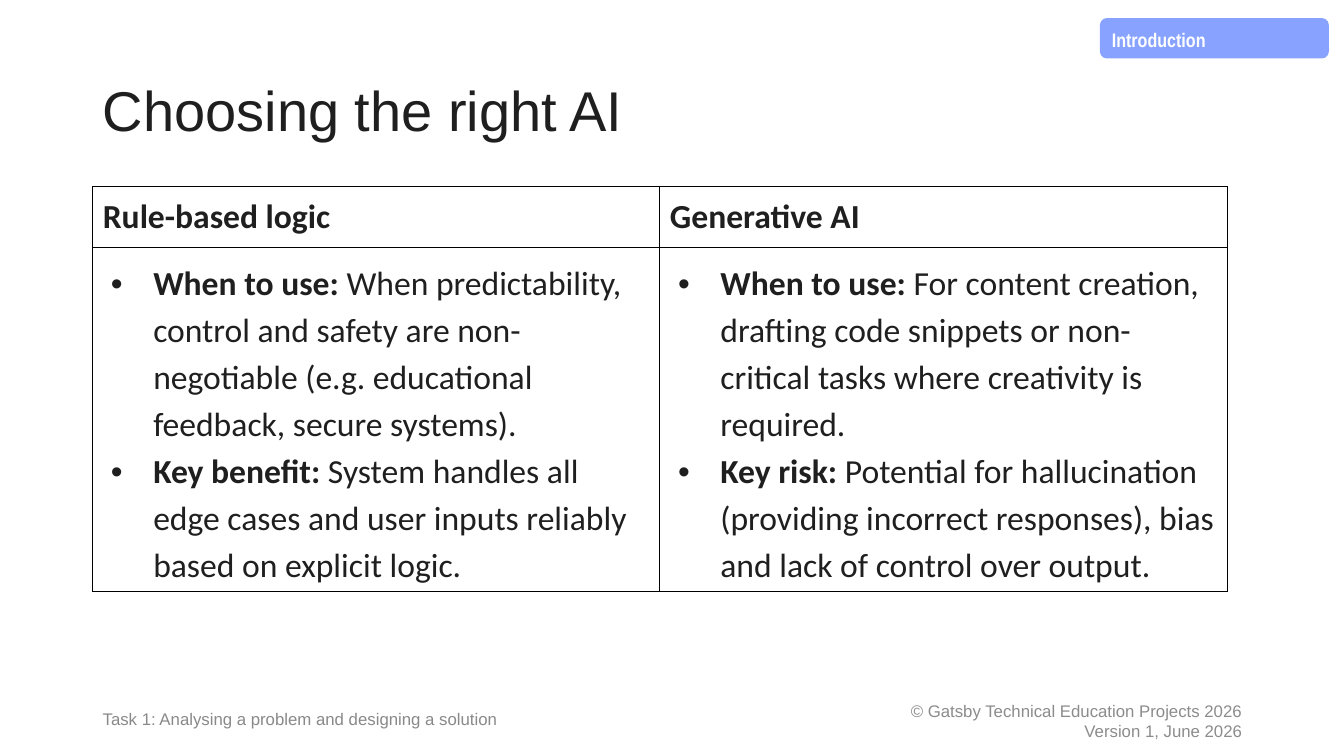
from lxml import etree
from pptx import Presentation
from pptx.dml.color import RGBColor
from pptx.enum.shapes import MSO_SHAPE
from pptx.enum.text import MSO_ANCHOR, PP_ALIGN
from pptx.oxml.ns import qn
from pptx.util import Pt

EMU_PER_PX = 9144
MIDDLE = MSO_ANCHOR.MIDDLE
LEFT, RIGHT = PP_ALIGN.LEFT, PP_ALIGN.RIGHT
BADGE_SHAPE = MSO_SHAPE.FLOWCHART_ALTERNATE_PROCESS
TITLE_ONLY = 5
INK, GREY, FOOTER_GREY = "1F1F1F", "8C8C8C", "898989"
WHITE, BLACK, PERIWINKLE = "FFFFFF", "000000", "88A2FF"

HEADERS = ["Rule-based logic", "Generative AI"]
ADVICE = [
    [
        ("When to use:", " When predictability, control and safety are non-negotiable "
                         "(e.g. educational feedback, secure systems)."),
        ("Key benefit:", " System handles all edge cases and user inputs reliably "
                         "based on explicit logic."),
    ],
    [
        ("When to use:", " For content creation, drafting code snippets or "
                         "non-critical tasks where creativity is required."),
        ("Key risk:", " Potential for hallucination (providing incorrect responses), "
                      "bias and lack of control over output."),
    ],
]


def px(length):
    return length * EMU_PER_PX


def color(value):
    return RGBColor.from_string(value)


class SlideBuilder:
    def __init__(self, presentation):
        self.slide = presentation.slides.add_slide(presentation.slide_layouts[TITLE_ONLY])

    def style(self, paragraph, size, ink, name="Arial", bold=False, align=LEFT, spacing=None):
        paragraph.alignment = align
        if spacing:
            paragraph.line_spacing = spacing
        font = paragraph.font
        font.name, font.size, font.bold = name, Pt(size), bold
        font.color.rgb = color(ink)

    def fill_frame(self, frame, text, size, ink, **options):
        frame.word_wrap = True
        frame.vertical_anchor = MIDDLE
        frame.text = text
        for paragraph in frame.paragraphs:
            self.style(paragraph, size, ink, **options)

    def title(self, text, box):
        title = self.slide.shapes.title
        title.left, title.top, title.width, title.height = map(px, box)
        self.fill_frame(title.text_frame, text, 40, INK, spacing=0.9)

    def text(self, text, box, ink, **options):
        shape = self.slide.shapes.add_textbox(*map(px, box))
        self.fill_frame(shape.text_frame, text, 12, ink, **options)

    def badge(self, text, box):
        shape = self.slide.shapes.add_shape(BADGE_SHAPE, *map(px, box))
        shape.shadow.inherit = False
        shape.fill.solid()
        shape.fill.fore_color.rgb = color(PERIWINKLE)
        shape.line.fill.background()
        self.fill_frame(shape.text_frame, text, 14, WHITE, name="Arial Narrow",
                        bold=True, spacing=1.08)

    def format_cell(self, cell):
        cell.margin_left = cell.margin_right = cell.margin_top = cell.margin_bottom = px(10)
        properties = cell._tc.get_or_add_tcPr()
        for side in ("a:lnL", "a:lnR", "a:lnT", "a:lnB"):
            line = etree.SubElement(properties, qn(side), w=str(Pt(0.75)))
            solid = etree.SubElement(line, qn("a:solidFill"))
            etree.SubElement(solid, qn("a:srgbClr"), val=BLACK)
        cell.fill.background()

    def bullet(self, paragraph, label, detail):
        properties = paragraph._p.get_or_add_pPr()
        properties.set("marL", str(px(50)))
        properties.set("indent", str(px(-42)))
        bullet_color = etree.SubElement(properties, qn("a:buClr"))
        etree.SubElement(bullet_color, qn("a:srgbClr"), val=INK)
        etree.SubElement(properties, qn("a:buFont"), typeface="Arial")
        etree.SubElement(properties, qn("a:buChar"), char="•")
        self.style(paragraph, 24, INK, name="Calibri", spacing=1.15)
        for text, bold in ((label, True), (detail, False)):
            run = paragraph.add_run()
            run.text = text
            run.font.bold = bold

    def table(self, headers, advice, box, row_heights):
        frame = self.slide.shapes.add_table(len(row_heights), len(headers), *map(px, box))
        table = frame.table
        table.first_row = table.horz_banding = False
        for row, height in zip(table.rows, row_heights):
            row.height = px(height)
        for column, (header, points) in enumerate(zip(headers, advice)):
            header_cell, advice_cell = table.cell(0, column), table.cell(1, column)
            self.format_cell(header_cell)
            self.format_cell(advice_cell)
            header_cell.text = header
            self.style(header_cell.text_frame.paragraphs[0], 24, INK, name="Calibri", bold=True)
            body = advice_cell.text_frame
            for index, (label, detail) in enumerate(points):
                paragraph = body.add_paragraph() if index else body.paragraphs[0]
                self.bullet(paragraph, label, detail)


def main():
    presentation = Presentation()
    presentation.slide_width, presentation.slide_height = px(1333), px(750)
    builder = SlideBuilder(presentation)
    builder.text("© Gatsby Technical Education Projects 2026\nVersion 1, June 2026",
                 (792, 695, 450, 40), GREY, align=RIGHT)
    builder.title("Choosing the right AI", (92, 40, 1150, 145))
    builder.table(HEADERS, ADVICE, (92, 185, 1125, 399), (60, 339))
    builder.text("Task 1: Analysing a problem and designing a solution",
                 (92, 695, 544, 34), FOOTER_GREY, spacing=1.08)
    builder.badge("Introduction", (1091, 18, 227, 40))
    presentation.save("out.pptx")


if __name__ == "__main__":
    main()
